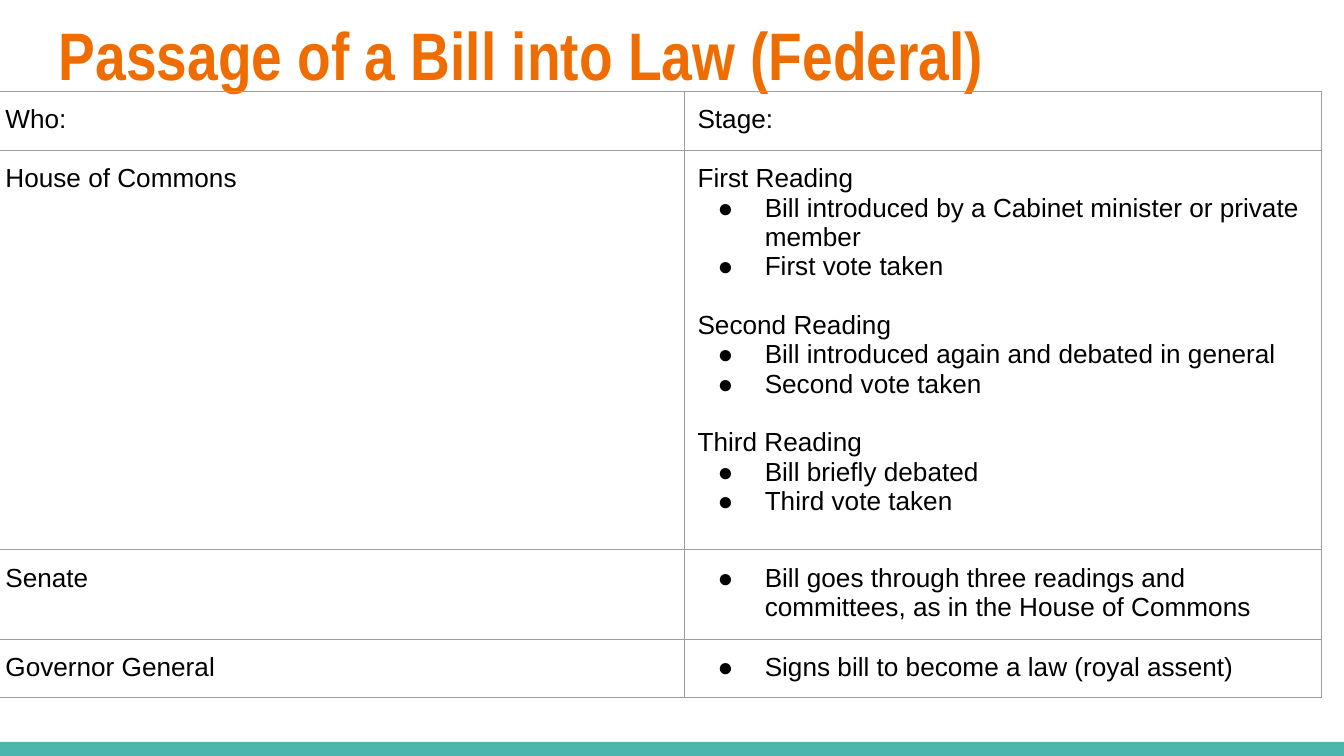
from lxml import etree
from pptx import Presentation
from pptx import util as u
from pptx.dml.color import RGBColor
from pptx.enum import shapes, text
from pptx.oxml import ns

COLOURS = {"title": "EF6C00", "text": "000000", "border": "9E9E9E", "bar": "4DB6AC"}
COLUMN_WIDTHS = [5.15, 4.74]
ROW_HEIGHTS = [0.44, 0.42, 0.43, 0.42]
BULLET = "● "

ROWS = [
    ("Who:", ["Stage:"]),
    ("House of Commons", [
        "First Reading",
        "● Bill introduced by a Cabinet minister or private member",
        "● First vote taken",
        "Second Reading",
        "● Bill introduced again and debated in general",
        "● Second vote taken",
        "Third Reading",
        "● Bill briefly debated",
        "● Third vote taken",
    ]),
    ("Senate", ["● Bill goes through three readings and committees, "
                "as in the House of Commons"]),
    ("Governor General", ["● Signs bill to become a law (royal assent)"]),
]


def colour(name):
    return RGBColor.from_string(COLOURS[name])


def add_node(parent, tag, **attributes):
    return etree.SubElement(parent, ns.qn(tag), **attributes)


class BillSlide:
    """Holds the style and the slide being filled."""

    def __init__(self, deck):
        self.page = deck.slides.add_slide(deck.slide_layouts[6])

    def set_font(self, paragraph, name, size, shade, bold=False):
        font = paragraph.font
        font.name, font.size, font.bold = name, u.Pt(size), bold
        font.color.rgb = colour(shade)

    def add_bar(self, left, top, width, height):
        bar = self.page.shapes.add_shape(
            shapes.MSO_SHAPE.RECTANGLE, *map(u.Inches, (left, top, width, height)))
        bar.shadow.inherit = False
        bar.fill.solid()
        bar.fill.fore_color.rgb = colour("bar")
        bar.line.fill.background()

    def add_title(self, words, left, top, width, height):
        box = self.page.shapes.add_textbox(*map(u.Inches, (left, top, width, height)))
        frame = box.text_frame
        frame.word_wrap = True
        frame.vertical_anchor = text.MSO_ANCHOR.TOP
        frame.margin_top = u.Inches(0.1)
        frame.text = words
        self.set_font(frame.paragraphs[0], "Arial Narrow", 36, "title", bold=True)

    def add_bullet(self, paragraph):
        props = paragraph._p.get_or_add_pPr()
        props.set("marL", str(u.Inches(0.5)))
        props.set("indent", str(u.Inches(-0.35)))
        # The bullet nodes must come before the default run properties.
        default_run = props.find(ns.qn("a:defRPr"))
        add_node(add_node(props, "a:buClr"), "a:srgbClr", val=COLOURS["text"])
        add_node(props, "a:buFont", typeface="Arial")
        add_node(props, "a:buChar", char=BULLET.strip())
        if default_run is not None:
            props.append(default_run)

    def add_borders(self, cell):
        props = cell._tc.get_or_add_tcPr()
        for side in ("a:lnL", "a:lnR", "a:lnT", "a:lnB"):
            line = add_node(props, side, w=str(u.Pt(0.75)))
            add_node(add_node(line, "a:solidFill"), "a:srgbClr", val=COLOURS["border"])

    def fill_cell(self, cell, lines):
        cell.margin_left = cell.margin_right = u.Inches(0.1)
        cell.margin_top = cell.margin_bottom = u.Inches(0.1)
        self.add_borders(cell)
        cell.fill.background()
        frame = cell.text_frame
        for index, line in enumerate(lines):
            para = frame.add_paragraph() if index else frame.paragraphs[0]
            para.text = line.removeprefix(BULLET)
            self.set_font(para, "Arial", 14, "text")
            if line.startswith(BULLET):
                self.add_bullet(para)
            elif index:
                para.space_before = u.Pt(15.7)

    def add_table(self, rows, left, top):
        size = sum(COLUMN_WIDTHS), sum(ROW_HEIGHTS)
        table = self.page.shapes.add_table(
            len(rows), len(COLUMN_WIDTHS), *map(u.Inches, (left, top, *size))).table
        table.first_row = table.horz_banding = False
        for column, width in zip(table.columns, COLUMN_WIDTHS):
            column.width = u.Inches(width)
        for row, height, (who, stages) in zip(table.rows, ROW_HEIGHTS, rows):
            row.height = u.Inches(height)
            self.fill_cell(row.cells[0], [who])
            self.fill_cell(row.cells[1], stages)


def main():
    deck = Presentation()
    deck.slide_width, deck.slide_height = u.Inches(10), u.Inches(10 * 9 / 16)
    slide = BillSlide(deck)
    slide.add_bar(0, 5.52, 10, 0.11)
    slide.add_title("Passage of a Bill into Law (Federal)", 0.34, 0, 9.32, 0.77)
    slide.add_table(ROWS, -0.06, 0.68)
    deck.save("out.pptx")


if __name__ == "__main__":
    main()
